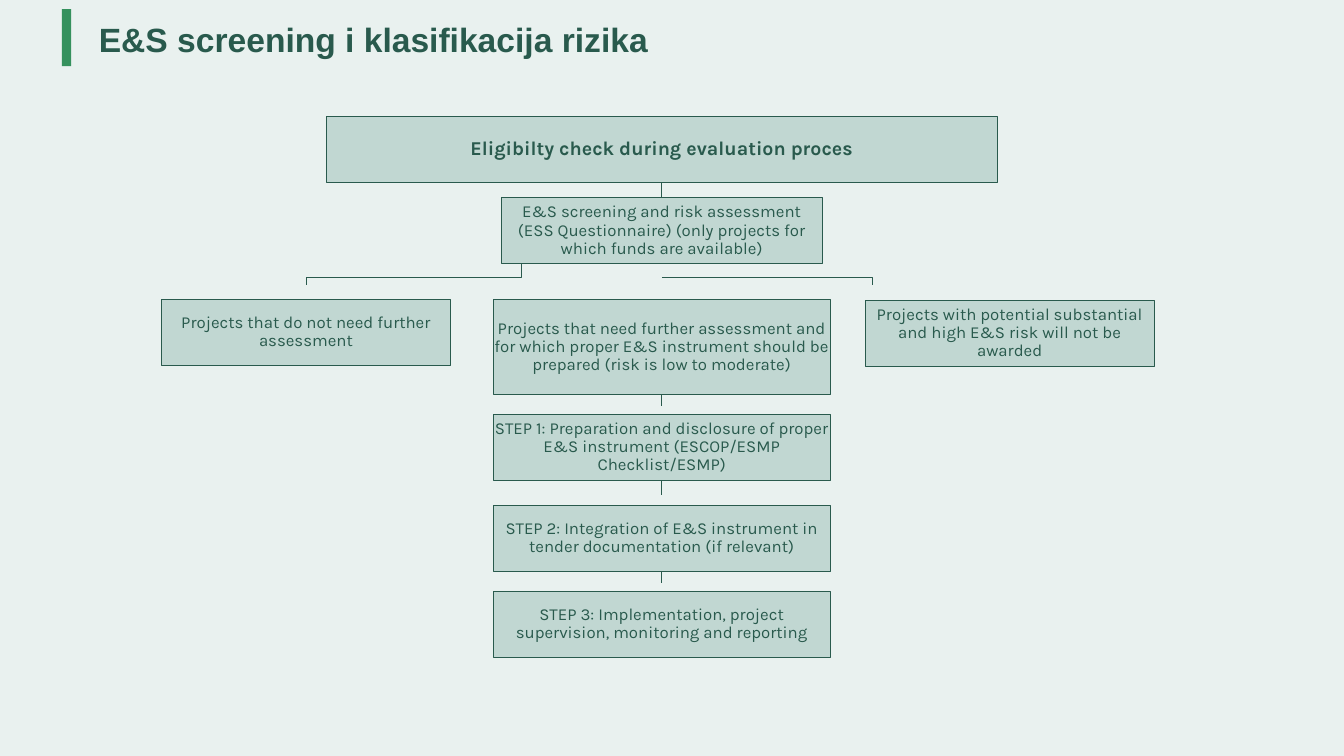
from dataclasses import dataclass

from lxml import etree
from pptx import Presentation
from pptx import util as u
from pptx.dml.color import RGBColor
from pptx.enum import shapes, text
from pptx.oxml.ns import qn


@dataclass(frozen=True)
class Theme:
    paper: str = "E9F1EF"
    ink: str = "295A4D"
    box: str = "C1D7D2"
    accent: str = "35915D"
    title_font: str = "Arial"
    body_font: str = "Karla"
    title_size: int = 24
    head_size: int = 14
    body_size: int = 12
    line_width: float = 0.5
    spacing: float = 0.9


class FlowSlide:
    """Draws a flow chart on one slide, with lengths as percent of the slide's size."""

    def __init__(self, prs, theme):
        self.prs, self.theme = prs, theme
        self.s = prs.slides.add_slide(prs.slide_layouts[5])
        self.paint(self.s.background, theme.paper)

    def x(self, share):
        return round(self.prs.slide_width * share / 100)

    def y(self, share):
        return round(self.prs.slide_height * share / 100)

    def area(self, left, top, width, height):
        return self.x(left), self.y(top), self.x(width), self.y(height)

    def paint(self, target, color):
        target.fill.solid()
        target.fill.fore_color.rgb = RGBColor.from_string(color)

    def stroke(self, sp):
        sp.line.color.rgb = RGBColor.from_string(self.theme.ink)
        sp.line.width = u.Pt(self.theme.line_width)

    def label(self, sp, words, font, size, bold, align):
        tf = sp.text_frame
        tf.word_wrap = True
        tf.auto_size = text.MSO_AUTO_SIZE.NONE
        tf.vertical_anchor = text.MSO_ANCHOR.MIDDLE
        p = tf.paragraphs[0]
        p.text = words
        p.alignment = align
        p.line_spacing = self.theme.spacing
        p.font.name, p.font.size, p.font.bold = font, u.Pt(size), bold
        p.font.color.rgb = RGBColor.from_string(self.theme.ink)
        return tf

    def title(self, words, *area):
        sp = self.s.shapes.title
        sp.left, sp.top, sp.width, sp.height = self.area(*area)
        self.label(sp, words, self.theme.title_font, self.theme.title_size,
                   True, text.PP_ALIGN.LEFT)

    def rectangle(self, color, *area):
        sp = self.s.shapes.add_shape(shapes.MSO_SHAPE.RECTANGLE, *self.area(*area))
        sp.shadow.inherit = False
        self.paint(sp, color)
        return sp

    def bar(self, *area):
        self.rectangle(self.theme.accent, *area).line.fill.background()

    def box(self, words, centre, top, width, height=8.7, head=False):
        sp = self.rectangle(self.theme.box, centre - width / 2, top, width, height)
        self.stroke(sp)
        size = self.theme.head_size if head else self.theme.body_size
        tf = self.label(sp, words, self.theme.body_font, size, head,
                        text.PP_ALIGN.CENTER)
        tf.margin_left = tf.margin_right = u.Inches(0.01)
        tf.margin_top = tf.margin_bottom = u.Inches(0.01)
        return sp

    def link(self, upper, lower=None, length=0):
        middle, bottom = upper.left + upper.width // 2, upper.top + upper.height
        c = self.s.shapes.add_connector(shapes.MSO_CONNECTOR.STRAIGHT, middle, bottom,
                                        middle, bottom + self.y(length))
        c.begin_connect(upper, 2)
        if lower is not None:
            c.end_connect(lower, 0)
        self.stroke(c)
        etree.SubElement(c._element.spPr, qn("a:effectLst"))

    def route(self, *points):
        start, *rest = [(self.x(px), self.y(py)) for px, py in points]
        builder = self.s.shapes.build_freeform(*start)
        builder.add_line_segments(rest, close=False)
        sp = builder.convert_to_shape()
        sp.shadow.inherit = False
        sp.fill.background()
        self.stroke(sp)


def main():
    prs = Presentation()
    prs.slide_width, prs.slide_height = u.Inches(13.33), u.Inches(7.5)
    flow = FlowSlide(prs, Theme())
    flow.title("E&S screening i klasifikacija rizika", 6.6, 2.4, 80.35, 6.27)
    flow.bar(4.6, 1.2, 0.7, 7.55)

    left, centre, right = 22.77, 49.24, 75.13
    side_width, step_width = 21.53, 25.06
    branch_top, branch_y, branch_end = 39.6, 36.7, 37.75

    flow.route((38.8, 34.9), (38.8, branch_y), (left, branch_y), (left, branch_end))
    flow.route((centre, branch_y), (64.9, branch_y), (64.9, branch_end))

    check = flow.box("Eligibilty check during evaluation proces",
                     centre, 15.4, 49.88, head=True)
    screening = flow.box("E&S screening and risk assessment (ESS Questionnaire) "
                         "(only projects for which funds are available)",
                         centre, 26.15, 23.86)
    flow.link(check, screening)

    flow.box("Projects that do not need further assessment",
             left, branch_top, side_width)
    flow.box("Projects with potential substantial and high E&S risk will not be awarded",
             right, branch_top + 0.13, side_width)

    steps = [
        ("Projects that need further assessment and for which proper E&S instrument "
         "should be prepared (risk is low to moderate)", branch_top, 12.55, 1.6),
        ("STEP 1: Preparation and disclosure of proper E&S instrument "
         "(ESCOP/ESMP Checklist/ESMP)", 54.8, 8.7, 2),
        ("STEP 2: Integration of E&S instrument in tender documentation (if relevant)",
         66.85, 8.7, 1.6),
        ("STEP 3: Implementation, project supervision, monitoring and reporting",
         78.2, 8.7, 0),
    ]
    for words, top, height, stub in steps:
        step = flow.box(words, centre, top, step_width, height)
        if stub:
            flow.link(step, length=stub)

    prs.save("out.pptx")


if __name__ == "__main__":
    main()
